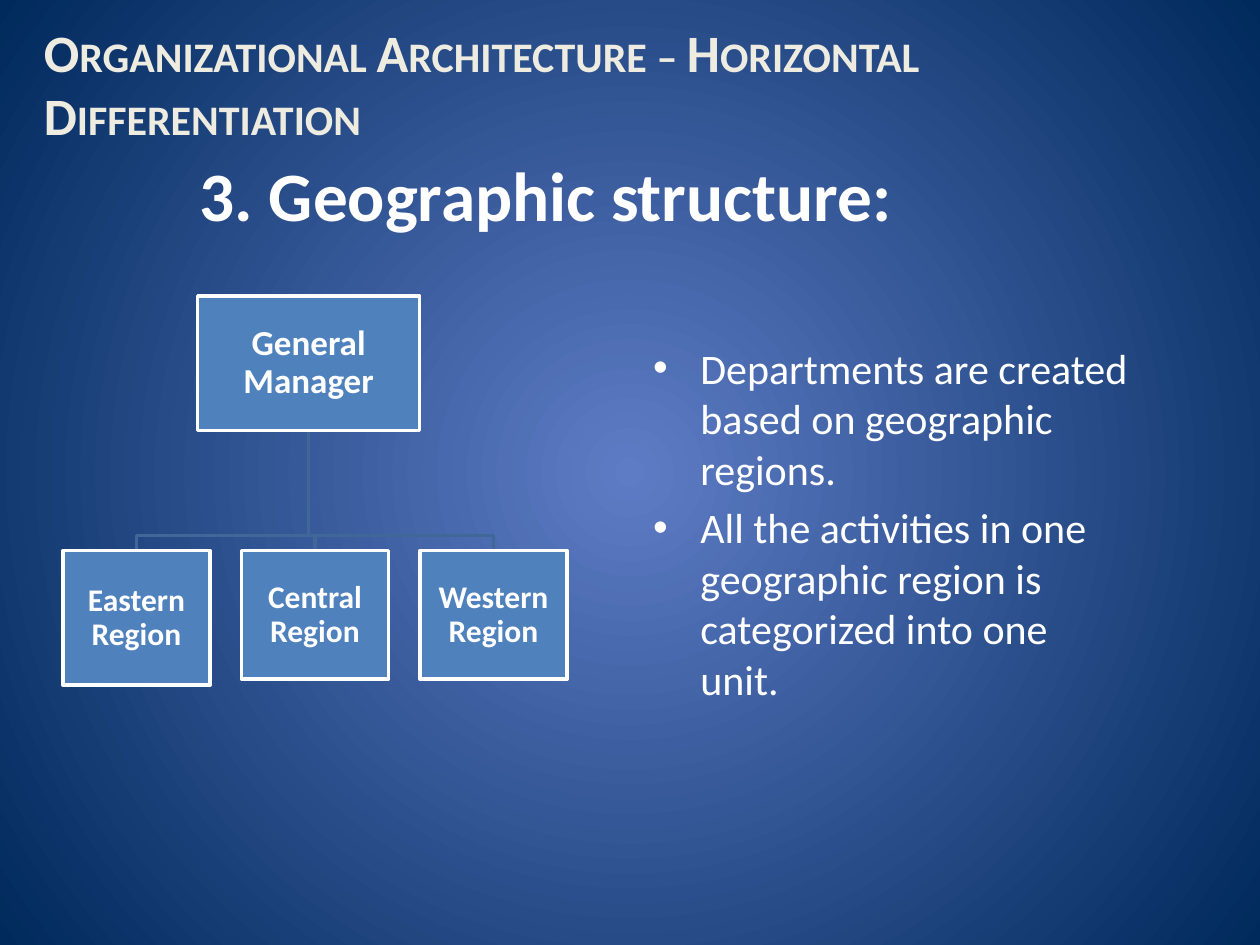
from lxml.etree import SubElement
from pptx import Presentation
from pptx.dml.color import RGBColor
from pptx.enum.shapes import MSO_SHAPE
from pptx.enum.text import MSO_ANCHOR, MSO_AUTO_SIZE, PP_ALIGN
from pptx.oxml import parse_xml
from pptx.oxml.ns import nsdecls, qn
from pptx.util import Pt

COLORS = {
    "center": "5E7CC5",
    "edge": "00295C",
    "box": "4F81BD",
    "link": "3F6797",
    "white": "FFFFFF",
    "heading": "EEECE1",
}
MANAGER = (113, 169.2, 126.8, 77)
REGIONS = [("Eastern Region", 77), ("Central Region", 73.5), ("Western Region", 73.5)]
REGION_LEFT, REGION_TOP, REGION_WIDTH, REGION_STEP = 36, 314.6, 84, 102
LINK_TURN = 306
POINTS = [
    "Departments are created based on geographic regions.",
    "All the activities in one geographic region is categorized into one unit.",
]


def color(name):
    return RGBColor.from_string(COLORS[name])


def paint_background(page):
    fill = page.background.fill
    fill.gradient()
    for stop, name in zip(fill.gradient_stops, ("center", "edge")):
        stop.color.rgb = color(name)
    gradient = page.background._cSld.find(".//" + qn("a:gradFill"))
    for stop, position in zip(gradient.iter(qn("a:gs")), ("0", "100000")):
        stop.set("pos", position)
        for effect in list(stop[0]):
            stop[0].remove(effect)
    gradient.remove(gradient.find(qn("a:lin")))
    gradient.append(parse_xml(
        f'<a:path {nsdecls("a")} path="circle">'
        '<a:fillToRect l="50000" t="50000" r="50000" b="50000"/></a:path>'
    ))


def place(shape, left, top, width, height):
    shape.left, shape.top = Pt(left), Pt(top)
    shape.width, shape.height = Pt(width), Pt(height)


def add_span(para, text, size, name="white", bold=False):
    span = para.add_run()
    span.text = text
    span.font.name = "Calibri"
    span.font.size = Pt(size)
    span.font.bold = bold
    span.font.color.rgb = color(name)
    return span


def fill_title(page):
    title = page.shapes.title
    place(title, 36, 84, 552, 54)
    frame = title.text_frame
    frame.auto_size = MSO_AUTO_SIZE.NONE
    frame.vertical_anchor = MSO_ANCHOR.MIDDLE
    para = frame.paragraphs[0]
    para.alignment = PP_ALIGN.CENTER
    add_span(para, "3. Geographic structure:", 39.6, bold=True)


def fill_body(page):
    body = page.placeholders[1]
    place(body, 366, 192, 288, 246)
    frame = body.text_frame
    frame.auto_size = MSO_AUTO_SIZE.NONE
    for index, text in enumerate(POINTS):
        para = frame.add_paragraph() if index else frame.paragraphs[0]
        add_span(para, text, 24)


def add_heading(page):
    box = page.shapes.add_textbox(Pt(18), Pt(-12), Pt(636), Pt(99))
    frame = box.text_frame
    frame.word_wrap = True
    frame.vertical_anchor = MSO_ANCHOR.BOTTOM
    text = "Organizational Architecture – Horizontal Differentiation"
    span = add_span(frame.paragraphs[0], text, 30, "heading", True)
    span.font._element.set("cap", "small")


def add_link(page, start, end):
    (start_x, start_y), (end_x, end_y) = start, end
    builder = page.shapes.build_freeform(Pt(start_x), Pt(start_y))
    corners = [(start_x, LINK_TURN), (end_x, LINK_TURN), (end_x, end_y)]
    builder.add_line_segments([(Pt(x), Pt(y)) for x, y in corners], close=False)
    link = builder.convert_to_shape()
    link.shadow.inherit = False
    link.fill.background()
    link.line.color.rgb = color("link")
    link.line.width = Pt(2)


def add_box(page, text, size, left, top, width, height):
    box = page.shapes.add_shape(
        MSO_SHAPE.RECTANGLE, Pt(left), Pt(top), Pt(width), Pt(height)
    )
    box.shadow.inherit = False
    box.fill.solid()
    box.fill.fore_color.rgb = color("box")
    box.line.color.rgb = color("white")
    box.line.width = Pt(2)
    frame = box.text_frame
    frame.word_wrap = True
    frame.vertical_anchor = MSO_ANCHOR.MIDDLE
    frame.margin_left = frame.margin_right = Pt(1)
    frame.margin_top = frame.margin_bottom = Pt(1)
    para = frame.paragraphs[0]
    para.alignment = PP_ALIGN.CENTER
    para.line_spacing = 0.9
    add_span(para, text, size, bold=True)


def add_chart_of_regions(page):
    left, top, width, height = MANAGER
    start = (left + width / 2, top + height)
    lefts = [REGION_LEFT + index * REGION_STEP for index in range(len(REGIONS))]
    for region_left in reversed(lefts):
        add_link(page, start, (region_left + REGION_WIDTH / 2, REGION_TOP))
    add_box(page, "General Manager", 20, *MANAGER)
    for region_left, (name, region_height) in zip(lefts, REGIONS):
        add_box(page, name, 18, region_left, REGION_TOP, REGION_WIDTH, region_height)


def main():
    deck = Presentation()
    deck.slide_width, deck.slide_height = Pt(720), Pt(540)
    page = deck.slides.add_slide(deck.slide_layouts[1])
    paint_background(page)
    fill_title(page)
    add_chart_of_regions(page)
    fill_body(page)
    add_heading(page)
    deck.save("out.pptx")


if __name__ == "__main__":
    main()
